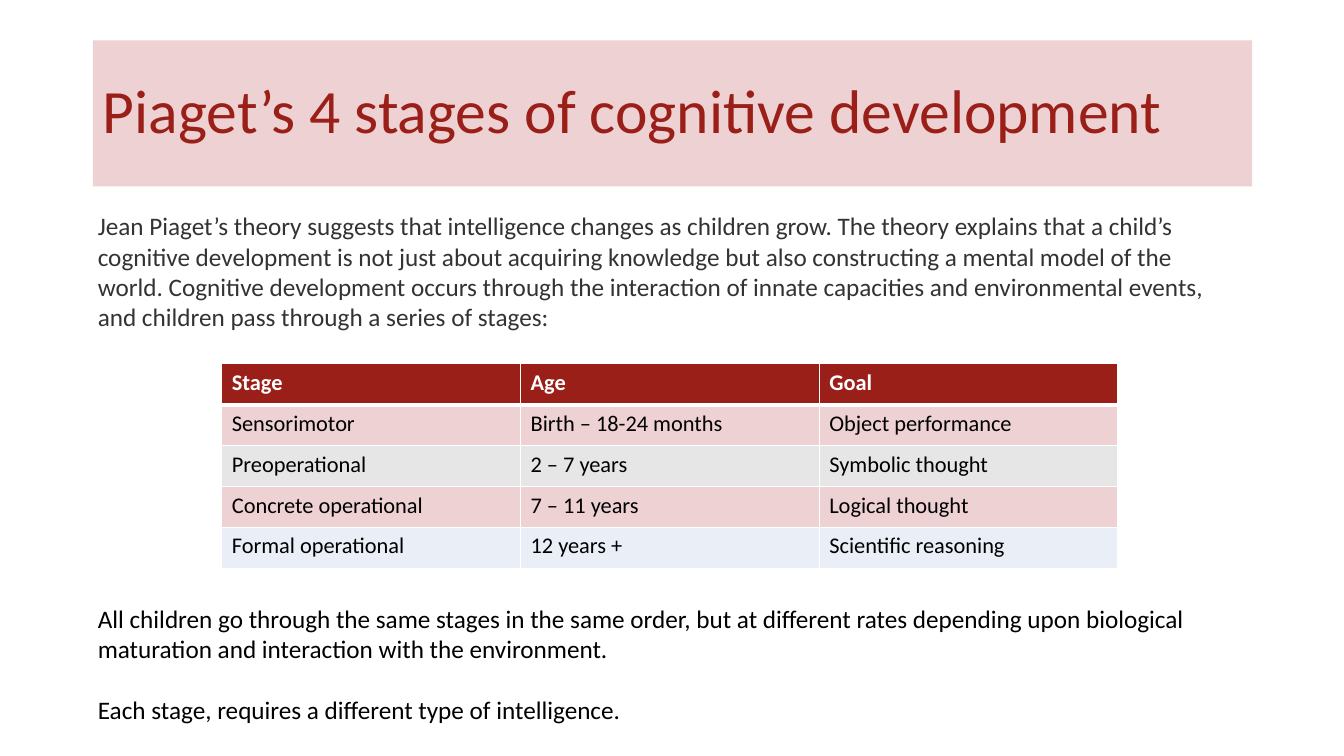
"""Build a slide on Piaget's four stages of cognitive development."""
from dataclasses import dataclass

from lxml.etree import SubElement
from pptx import Presentation
from pptx.dml.color import RGBColor as Color
from pptx.enum.text import MSO_ANCHOR as Anchor, MSO_AUTO_SIZE as AutoSize, PP_ALIGN as Align
from pptx.oxml import parse_xml
from pptx.oxml.ns import nsdecls, qn
from pptx.util import Inches, Pt


@dataclass(frozen=True)
class Theme:
    font: str = "Calibri"
    red: str = "9A1F18"
    pink: str = "EED2D3"
    grey: str = "E7E6E6"
    blue: str = "EAEFF7"
    ink: str = "333333"
    black: str = "000000"
    white: str = "FFFFFF"
    title_size: int = 44
    body_size: int = 18
    table_size: int = 16


def add_text(para, text, size, color, bold=False):
    span = para.add_run()
    span.text = text
    formats = {"name": theme.font, "size": Pt(size), "bold": bold}
    for name, value in formats.items():
        setattr(span.font, name, value)
    span.font.color.rgb = Color.from_string(color)


def add_border(cell, side, width, position):
    line = parse_xml(
        f'<a:{side} {nsdecls("a")} w="{Pt(width)}"><a:solidFill>'
        f'<a:srgbClr val="{theme.white}"/></a:solidFill></a:{side}>'
    )
    cell._tc.get_or_add_tcPr().insert(position, line)


theme = Theme()
deck = Presentation()
deck.slide_width = Inches(13.33)
deck.slide_height = Inches(7.5)
page = deck.slides.add_slide(deck.slide_layouts[1])
title, body = page.placeholders

frames = [
    (title, (0.92, 0.4, 11.5, 1.45), Anchor.MIDDLE),
    (body, (0.87, 2.04, 11.55, 5.4), Anchor.TOP),
]
for box, place, anchor in frames:
    for name, value in zip(("left", "top", "width", "height"), place):
        setattr(box, name, Inches(value))
    formats = {"word_wrap": True, "auto_size": AutoSize.NONE, "vertical_anchor": anchor}
    for name, value in formats.items():
        setattr(box.text_frame, name, value)

title.fill.solid()
title.fill.fore_color.rgb = Color.from_string(theme.pink)
heading = title.text_frame.paragraphs[0]
heading.alignment = Align.LEFT
heading.line_spacing = 0.9
add_text(heading, "Piaget’s 4 stages of cognitive development", theme.title_size, theme.red)

passages = [
    ("Jean Piaget’s theory suggests that intelligence changes as children grow. "
     "The theory explains that a child’s cognitive development is not just about "
     "acquiring knowledge but also constructing a mental model of the world. "
     "Cognitive development occurs through the interaction of innate capacities and "
     "environmental events, and children pass through a series of stages:", theme.ink, 0),
    ("All children go through the same stages in the same order, but at different rates "
     "depending upon biological maturation and interaction with the environment.",
     theme.black, 194),
    ("Each stage, requires a different type of intelligence.", theme.black, 21.5),
]
for index, (text, color, gap) in enumerate(passages):
    para = body.text_frame.paragraphs[0] if index == 0 else body.text_frame.add_paragraph()
    formats = {"alignment": Align.LEFT, "line_spacing": 1.0,
               "space_before": Pt(gap), "space_after": Pt(0)}
    for name, value in formats.items():
        setattr(para, name, value)
    settings = para._p.get_or_add_pPr()
    settings.set("marL", "0")
    settings.set("indent", "0")
    SubElement(settings, qn("a:buNone"))
    add_text(para, text, theme.body_size, color)

stages = [
    (theme.red, "Stage", "Age", "Goal"),
    (theme.pink, "Sensorimotor", "Birth – 18-24 months", "Object performance"),
    (theme.grey, "Preoperational", "2 – 7 years", "Symbolic thought"),
    (theme.pink, "Concrete operational", "7 – 11 years", "Logical thought"),
    (theme.blue, "Formal operational", "12 years +", "Scientific reasoning"),
]
table = page.shapes.add_table(
    len(stages), 3, Inches(2.2), Inches(3.61), Inches(8.89), Inches(2.03)
).table
for row, (fill, *texts) in enumerate(stages):
    header = row == 0
    widths = {"lnL": 1, "lnR": 1, "lnT": 3 if row == 1 else 1, "lnB": 3 if header else 1}
    for column, text in enumerate(texts):
        cell = table.cell(row, column)
        cell.fill.solid()
        cell.fill.fore_color.rgb = Color.from_string(fill)
        color = theme.white if header else theme.black
        add_text(cell.text_frame.paragraphs[0], text, theme.table_size, color, header)
        for position, (side, width) in enumerate(widths.items()):
            add_border(cell, side, width, position)

deck.save("out.pptx")
